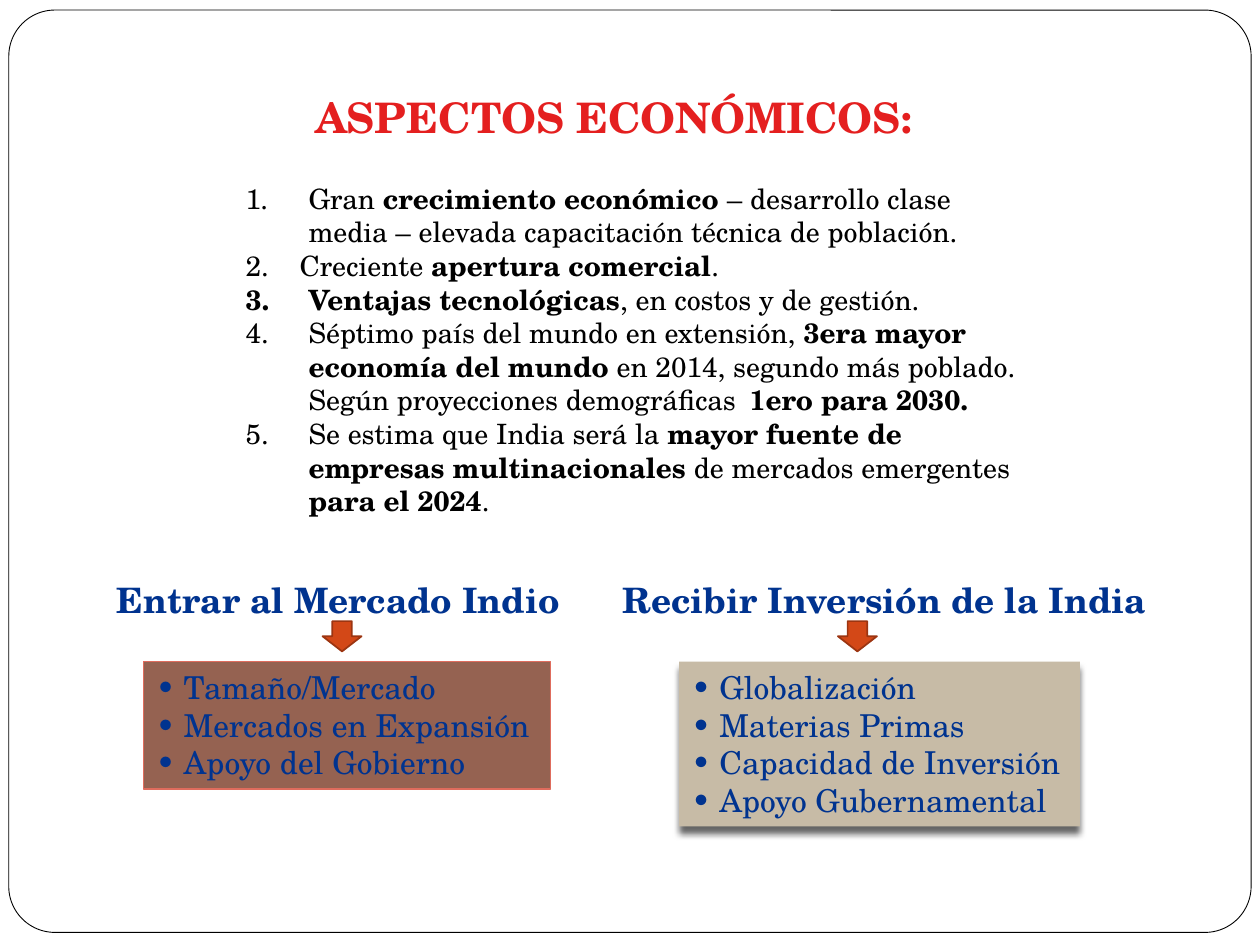
from dataclasses import dataclass

from lxml.etree import SubElement
from pptx import Presentation
from pptx.dml.color import RGBColor
from pptx.enum.shapes import MSO_SHAPE
from pptx.enum.text import MSO_ANCHOR, PP_ALIGN
from pptx.oxml.ns import qn
from pptx.util import Inches, Pt

COLORS = {
    "white": "FFFFFF",
    "black": "000000",
    "title": "E41F1F",
    "blue": "00338F",
    "brown": "956251",
    "coral": "DF6C5D",
    "sand": "C7BBA6",
    "arrow": "D34817",
    "arrow_edge": "9C3511",
}
FONT = "TeX Gyre Schola"
SLIDE_WIDTH, SLIDE_HEIGHT = Inches(10), Inches(7.5)
COLUMNS, ROWS = 100, 75
HEADING_ROW, ARROW_ROW, PANEL_ROW = 45.4, 49.3, 52.5


@dataclass(frozen=True)
class Area:
    """A rectangle measured in columns and rows of the slide grid."""
    column: float
    row: float
    columns: float
    rows: float

    def box(self) -> tuple[int, int, int, int]:
        column_width, row_height = SLIDE_WIDTH / COLUMNS, SLIDE_HEIGHT / ROWS
        return (round(self.column * column_width), round(self.row * row_height),
                round(self.columns * column_width), round(self.rows * row_height))


@dataclass(frozen=True)
class Aspect:
    """A numbered item; every second piece of text, marked True, is bold."""
    pieces: tuple[tuple[str, bool], ...]
    indent: float = 0.5


@dataclass(frozen=True)
class Strategy:
    heading: str
    heading_area: Area
    arrow_column: float
    panel_area: Area
    reasons: tuple[str, ...]
    fill: str
    line: str | None = None
    shadow: bool = False


ASPECTS = (
    Aspect((("Gran ", False), ("crecimiento económico ", True),
            ("– desarrollo clase media – elevada capacitación técnica de población.", False))),
    Aspect((("Creciente ", False), ("apertura comercial", True), (".", False)), 0.43),
    Aspect((("Ventajas tecnológicas", True), (", en costos y de gestión.", False))),
    Aspect((("Séptimo país del mundo en extensión, ", False),
            ("3era mayor economía del mundo", True),
            (" en 2014, segundo más poblado. Según proyecciones demográficas ", False),
            ("\t1ero para 2030.", True))),
    Aspect((("Se estima que India será la ", False),
            ("mayor fuente de empresas multinacionales", True),
            (" de mercados emergentes ", False), ("para el 2024", True), (".", False))),
)

STRATEGIES = (
    Strategy("Entrar al Mercado Indio", Area(8.3, HEADING_ROW, 38.3, 4.4), 25.6,
             Area(11.4, PANEL_ROW, 32.3, 10.1),
             ("Tamaño/Mercado", "Mercados en Expansión", "Apoyo del Gobierno"),
             "brown", line="coral"),
    Strategy("Recibir Inversión de la India", Area(48.4, HEADING_ROW, 43.7, 4.4), 66.5,
             Area(53.9, PANEL_ROW, 31.8, 13.1),
             ("Globalización", "Materias Primas", "Capacidad de Inversión",
              "Apoyo Gubernamental"),
             "sand", shadow=True),
)


def color(name: str) -> RGBColor:
    return RGBColor.from_string(COLORS[name])


def add_run(paragraph, text: str, size: float, color_name: str, bold: bool = False) -> None:
    run = paragraph.add_run()
    run.text = text
    run.font.name = FONT
    run.font.size = Pt(size)
    run.font.bold = bold
    run.font.color.rgb = color(color_name)


def set_hanging_indent(paragraph, inches: float):
    properties = paragraph._p.get_or_add_pPr()
    properties.set("marL", str(Inches(inches)))
    properties.set("indent", str(-Inches(inches)))
    return properties


def paragraphs_for(frame, items):
    """Yield each item with its own paragraph, using the existing first one."""
    for index, item in enumerate(items):
        yield item, frame.add_paragraph() if index else frame.paragraphs[0]


def add_shape(slide, kind, area: Area, fill: str, line: str | None, line_width: float = 1):
    shape = slide.shapes.add_shape(kind, *area.box())
    shape.shadow.inherit = False
    shape.fill.solid()
    shape.fill.fore_color.rgb = color(fill)
    if line:
        shape.line.color.rgb = color(line)
        shape.line.width = Pt(line_width)
    else:
        shape.line.fill.background()
    return shape


def add_text_frame(slide, area: Area, wrap: bool = True):
    frame = slide.shapes.add_textbox(*area.box()).text_frame
    frame.word_wrap = wrap
    return frame


def add_drop_shadow(shape) -> None:
    effects = shape._element.spPr.find(qn("a:effectLst"))
    shadow = SubElement(effects, qn("a:outerShdw"), blurRad=str(Pt(4)), dist=str(Pt(4)),
                        dir="5400000", algn="t", rotWithShape="0")
    shade = SubElement(shadow, qn("a:srgbClr"), val=COLORS["black"])
    SubElement(shade, qn("a:alpha"), val="60000")


def add_frame(slide) -> None:
    """Draw the rounded border behind everything else."""
    border = add_shape(slide, MSO_SHAPE.ROUNDED_RECTANGLE, Area(0.7, 0.8, 98.6, 73.2),
                       "white", "black", 0.5)
    border.adjustments[0] = 0.05
    slide.shapes._spTree.insert(2, border._element)


def format_title(slide, text: str) -> None:
    title = slide.shapes.title
    title.left, title.top, title.width, title.height = Area(24, 6.8, 50, 5.1).box()
    title.text_frame.word_wrap = False
    title.text_frame.vertical_anchor = MSO_ANCHOR.TOP
    paragraph = title.text_frame.paragraphs[0]
    paragraph.alignment = PP_ALIGN.LEFT
    add_run(paragraph, text, 24, "title", bold=True)


def add_aspects(slide) -> None:
    frame = add_text_frame(slide, Area(18.5, 13.9, 63.8, 27.9))
    for (number, aspect), paragraph in paragraphs_for(frame, enumerate(ASPECTS, 1)):
        properties = set_hanging_indent(paragraph, aspect.indent)
        SubElement(properties, qn("a:buFont"), typeface=FONT)
        SubElement(properties, qn("a:buAutoNum"), type="arabicPeriod", startAt=str(number))
        for text, bold in aspect.pieces:
            add_run(paragraph, text, 16, "black", bold)


def add_strategy(slide, strategy: Strategy) -> None:
    heading = add_text_frame(slide, strategy.heading_area, wrap=False)
    add_run(heading.paragraphs[0], strategy.heading, 20, "blue", bold=True)
    add_shape(slide, MSO_SHAPE.DOWN_ARROW, Area(strategy.arrow_column, ARROW_ROW, 3.1, 2.4),
              "arrow", "arrow_edge")
    panel = add_shape(slide, MSO_SHAPE.RECTANGLE, strategy.panel_area,
                      strategy.fill, strategy.line)
    if strategy.shadow:
        add_drop_shadow(panel)
    frame = panel.text_frame
    frame.word_wrap = True
    frame.vertical_anchor = MSO_ANCHOR.TOP
    for reason, paragraph in paragraphs_for(frame, strategy.reasons):
        paragraph.alignment = PP_ALIGN.LEFT
        properties = set_hanging_indent(paragraph, 0.22)
        SubElement(properties, qn("a:buFont"), typeface=FONT)
        SubElement(properties, qn("a:buChar"), char="•")
        add_run(paragraph, reason, 18, "blue")


def main() -> None:
    presentation = Presentation()
    presentation.slide_width, presentation.slide_height = SLIDE_WIDTH, SLIDE_HEIGHT
    slide = presentation.slides.add_slide(presentation.slide_layouts.get_by_name("Title Only"))
    add_frame(slide)
    format_title(slide, "ASPECTOS ECONÓMICOS:")
    add_aspects(slide)
    for strategy in STRATEGIES:
        add_strategy(slide, strategy)
    presentation.save("out.pptx")


if __name__ == "__main__":
    main()
